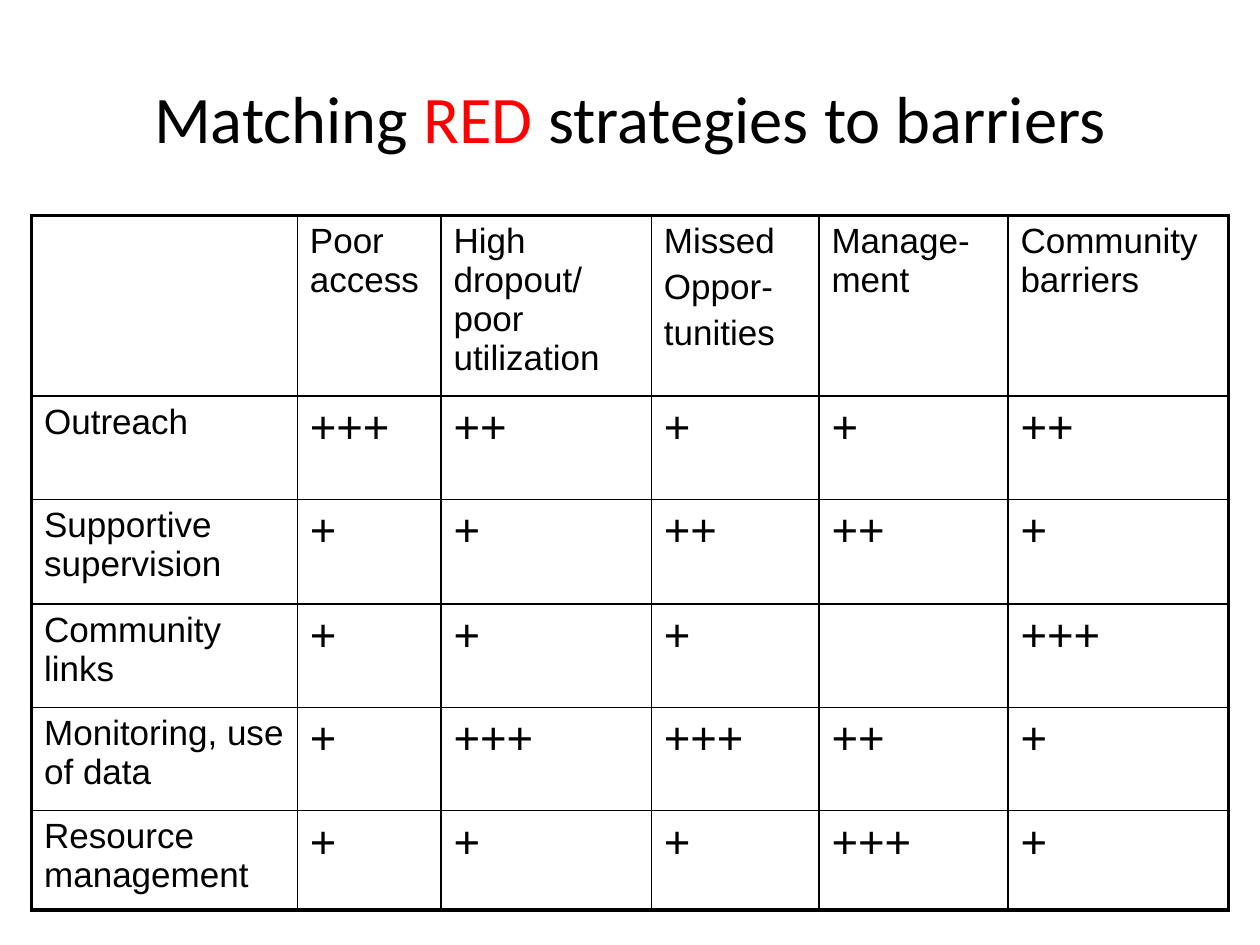
from lxml.etree import SubElement
from pptx import Presentation
from pptx.dml.color import RGBColor
from pptx.enum.text import MSO_ANCHOR, PP_ALIGN
from pptx.oxml.ns import qn
from pptx.util import Inches, Pt

HUES = {"ink": "000000", "red": "FF0000"}
THICK, THIN = Pt(2.25), Pt(1)
COLS = [2.11, 1.14, 1.67, 1.33, 1.5, 1.75]
TALL = [1.34, 0.82, 0.83, 0.82, 0.82, 0.79]
ROWS = [
    ["", "Poor access", "High dropout/ poor utilization",
     "Missed\nOppor-\ntunities", "Manage-ment", "Community barriers"],
    ["Outreach", "+++", "++", "+", "+", "++"],
    ["Supportive supervision", "+", "+", "++", "++", "+"],
    ["Community links", "+", "+", "+", "", "+++"],
    ["Monitoring, use of data", "+", "+++", "+++", "++", "+"],
    ["Resource management", "+", "+", "+", "+++", "+"],
]


def add_run(para, text, face, size, hue="ink"):
    run = para.add_run()
    run.text = text
    for key, value in {"name": face, "size": Pt(size)}.items():
        setattr(run.font, key, value)
    run.font.color.rgb = RGBColor.from_string(HUES[hue])


def add_edge(cell, side, width):
    props = cell._tc.get_or_add_tcPr()
    line = SubElement(props, qn(f"a:ln{side}"), w=str(width))
    fill = SubElement(line, qn("a:solidFill"))
    SubElement(fill, qn("a:srgbClr"), val=HUES["ink"])


deck = Presentation()
deck.slide_width, deck.slide_height = Inches(10), Inches(7.5)
slide = deck.slides.add_slide(deck.slide_layouts[6])

title = slide.shapes.add_textbox(Inches(0.5), Inches(0.3), Inches(9), Inches(1.25))
frame = title.text_frame
for key, value in {"word_wrap": True, "vertical_anchor": MSO_ANCHOR.MIDDLE}.items():
    setattr(frame, key, value)
head = frame.paragraphs[0]
head.alignment = PP_ALIGN.CENTER
for text, hue in [("Matching ", "ink"), ("RED ", "red"), ("strategies to barriers", "ink")]:
    add_run(head, text, "Calibri", 38, hue)

grid = slide.shapes.add_table(
    len(ROWS), len(COLS), Inches(0.25), Inches(1.71), Inches(sum(COLS)), Inches(sum(TALL))
).table
for key in ("first_row", "horz_banding"):
    setattr(grid, key, False)
for col, width in zip(grid.columns, COLS):
    col.width = Inches(width)
for row, height in zip(grid.rows, TALL):
    row.height = Inches(height)

for r, row in enumerate(ROWS):
    for c, text in enumerate(row):
        cell = grid.cell(r, c)
        edges = {
            "L": c == 0,
            "R": c == len(COLS) - 1,
            "T": r == 0,
            "B": r == len(ROWS) - 1,
        }
        for side, outer in edges.items():
            add_edge(cell, side, THICK if outer else THIN)
        cell.fill.background()
        size = 26 if r and c else 20
        for n, part in enumerate(text.split("\n")):
            body = cell.text_frame
            para = body.add_paragraph() if n else body.paragraphs[0]
            para.space_before = Pt(size * 0.2)
            if part:
                add_run(para, part, "Arial", size)

deck.save("out.pptx")
